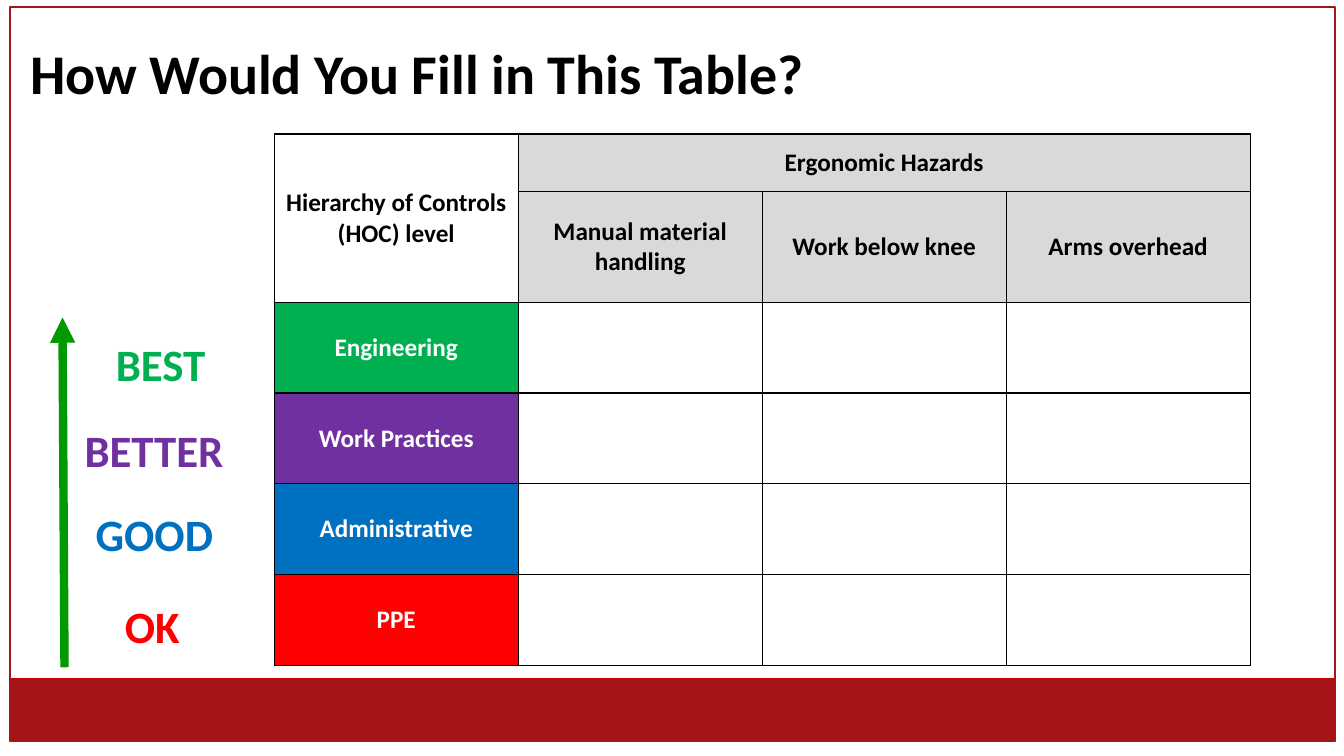
from dataclasses import dataclass

from pptx import Presentation
from pptx.dml.color import RGBColor
from pptx.enum.shapes import MSO_CONNECTOR as Connector, MSO_SHAPE as Shape
from pptx.enum.text import MSO_ANCHOR as Anchor, MSO_AUTO_SIZE as AutoSize, PP_ALIGN as Align
from pptx.oxml.ns import qn
from pptx.util import Inches, Pt
from lxml.etree import SubElement

# Content
TITLE = "How Would You Fill in This Table?"
CORNER = ["Hierarchy of Controls", "(HOC) level"]
GROUP = "Ergonomic Hazards"
HAZARDS = ["Manual material handling", "Work below knee", "Arms overhead"]
# control, rating, rating left, rating top, rating width, colour
LEVELS = [
    ("Engineering", "BEST", 1.05, 3.29, 1.1, "00B050"),
    ("Work Practices", "BETTER", 0.74, 4.14, 1.6, "7030A0"),
    ("Administrative", "GOOD", 0.85, 4.98, 1.38, "0070C0"),
    ("PPE", "OK", 1.14, 5.89, 0.75, "FF0000"),
]
TABLE_LEFT, TABLE_TOP, COLUMN_WIDTH = 2.72, 1.33, 2.42
ROW_HEIGHTS = [0.57, 1.1] + [0.9] * len(LEVELS)


@dataclass(frozen=True)
class Theme:
    font: str = "Calibri"
    black: str = "000000"
    white: str = "FFFFFF"
    header: str = "D9D9D9"
    band: str = "A51417"
    band_line: str = "C00000"
    arrow: str = "009900"
    title_size: int = 40
    rating_size: int = 32
    table_size: int = 18


theme = Theme()


def rgb(color):
    return RGBColor.from_string(color)


def write(para, text, size, color):
    span = para.add_run()
    span.text = text
    span.font.name = theme.font
    span.font.size = Pt(size)
    span.font.bold = True
    span.font.color.rgb = rgb(color)


def add_frame(left, top, width, height, line, fill=None):
    box = page.shapes.add_shape(
        Shape.RECTANGLE, Inches(left), Inches(top), Inches(width), Inches(height))
    box.shadow.inherit = False
    box.line.color.rgb = rgb(line)
    box.line.width = Pt(1)
    if fill:
        box.fill.solid()
        box.fill.fore_color.rgb = rgb(fill)
    else:
        box.fill.background()


def add_text(left, top, width, height, text, size, color, wrap=False):
    box = page.shapes.add_textbox(Inches(left), Inches(top), Inches(width), Inches(height))
    frame = box.text_frame
    frame.word_wrap = wrap
    frame.auto_size = AutoSize.NONE if wrap else AutoSize.SHAPE_TO_FIT_TEXT
    write(frame.paragraphs[0], text, size, color)
    return frame


def style_cell(cell):
    properties = cell._tc.get_or_add_tcPr()
    for side in ("a:lnL", "a:lnR", "a:lnT", "a:lnB"):
        border = SubElement(properties, qn(side), w=str(Pt(1)))
        paint = SubElement(border, qn("a:solidFill"))
        SubElement(paint, qn("a:srgbClr"), val=theme.black)
    cell.fill.background()
    cell.vertical_anchor = Anchor.MIDDLE


def fill_cell(cell, lines, color=theme.black, fill=None):
    frame = cell.text_frame
    for index, text in enumerate(lines):
        para = frame.add_paragraph() if index else frame.paragraphs[0]
        para.alignment = Align.CENTER
        write(para, text, theme.table_size, color)
    if fill:
        cell.fill.solid()
        cell.fill.fore_color.rgb = rgb(fill)


deck = Presentation()
deck.slide_width, deck.slide_height = Inches(13.33), Inches(7.5)
page = deck.slides.add_slide(deck.slide_layouts[6])

# Bottom band and page frame
add_frame(0.1, 6.73, 13.14, 0.62, theme.band_line, theme.band)
add_frame(0.1, 0.07, 13.14, 7.28, theme.band)

# Title
title = add_text(0.2, 0.29, 12.82, 0.93, TITLE, theme.title_size, theme.black, wrap=True)
title.vertical_anchor = Anchor.MIDDLE
title.paragraphs[0].line_spacing = 0.9

# Table grid
column_count = len(HAZARDS) + 1
table_shape = page.shapes.add_table(
    len(ROW_HEIGHTS), column_count, Inches(TABLE_LEFT), Inches(TABLE_TOP),
    Inches(COLUMN_WIDTH * column_count), Inches(sum(ROW_HEIGHTS)))
table = table_shape.table
table.first_row = table.horz_banding = False
for column in table.columns:
    column.width = Inches(COLUMN_WIDTH)
for row, height in zip(table.rows, ROW_HEIGHTS):
    row.height = Inches(height)
for cell in table.iter_cells():
    style_cell(cell)

# Table headings
table.cell(0, 0).merge(table.cell(1, 0))
table.cell(0, 1).merge(table.cell(0, column_count - 1))
fill_cell(table.cell(0, 0), CORNER)
fill_cell(table.cell(0, 1), [GROUP], fill=theme.header)
for index, hazard in enumerate(HAZARDS, start=1):
    fill_cell(table.cell(1, index), [hazard], fill=theme.header)

# Rating arrow
arrow = page.shapes.add_connector(
    Connector.STRAIGHT, Inches(0.64), Inches(6.62), Inches(0.62), Inches(3.15))
arrow.line.color.rgb = rgb(theme.arrow)
arrow.line.width = Pt(6)
SubElement(arrow.line._get_or_add_ln(), qn("a:tailEnd"), type="triangle")
SubElement(arrow._element.spPr, qn("a:effectLst"))

# Control levels and their ratings
for index, (control, rating, left, top, width, color) in enumerate(LEVELS, start=2):
    fill_cell(table.cell(index, 0), [control], theme.white, color)
    add_text(left, top, width, 0.64, rating, theme.rating_size, color)

deck.save("out.pptx")
